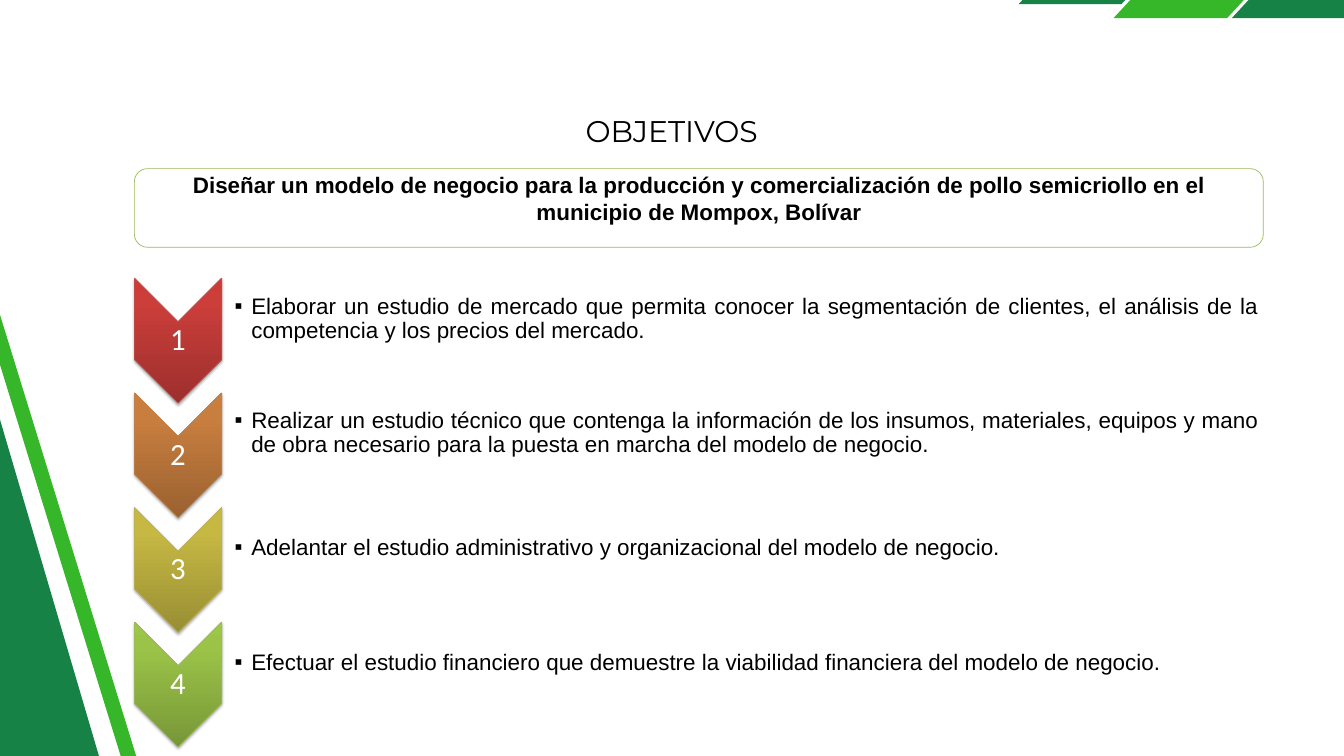
from pptx import Presentation
from pptx import util as u
from pptx.dml.color import RGBColor
from pptx.enum import shapes, text
from pptx.oxml import parse_xml
from pptx.oxml.ns import nsdecls

HUES = {"dark": "168246", "green": "35B729", "white": "FFFFFF",
        "black": "000000", "edge": "98B955"}

# Gradient stops (0, 80, 100 %), outline and text of each goal
GOALS = [
    (("9C2F2D", "CB3E3A", "CE3B37"), "C0504D",
     "Elaborar un estudio de mercado que permita conocer la segmentación de "
     "clientes, el análisis de la competencia y los precios del mercado."),
    (("9A6130", "C87E3F", "CC7E3C"), "BE8351",
     "Realizar un estudio técnico que contenga la información de los insumos, "
     "materiales, equipos y mano de obra necesario para la puesta en marcha "
     "del modelo de negocio."),
    (("988E34", "C6B843", "C9BB41"), "BDB255",
     "Adelantar el estudio administrativo y organizacional del modelo de negocio."),
    (("779737", "9BC348", "9DC746"), "9BBB59",
     "Efectuar el estudio financiero que demuestre la viabilidad financiera "
     "del modelo de negocio."),
]
STEP = 1.706


def color(name):
    return RGBColor.from_string(HUES.get(name, name))


def write(frame, words, size=24, font="Arial", hue="black", bold=False,
          align=text.PP_ALIGN.CENTER, anchor=text.MSO_ANCHOR.MIDDLE,
          pad=(0.02, 0.02, 0.02, 0.02), space=None, bullet=None):
    """Fill a text frame with one formatted paragraph."""
    frame.word_wrap = True
    frame.vertical_anchor = anchor
    (frame.margin_left, frame.margin_top,
     frame.margin_right, frame.margin_bottom) = map(u.Inches, pad)
    para = frame.paragraphs[0]
    para.alignment = align
    if space:
        para.line_spacing = space
    if bullet:
        para.level = 1
        props = para._p.get_or_add_pPr()
        props.set("marL", str(u.Inches(0.25)))
        props.set("indent", str(u.Inches(-0.25)))
        props.append(parse_xml(f'<a:buFont {nsdecls("a")} typeface="Arial"/>'))
        props.append(parse_xml(f'<a:buChar {nsdecls("a")} char="{bullet}"/>'))
    run = para.add_run()
    run.text = words
    run.font.size = u.Pt(size)
    run.font.name = font
    run.font.bold = bold
    run.font.color.rgb = color(hue)


class Deck:
    def __init__(self, wide, high):
        self.prs = Presentation()
        self.prs.slide_width = u.Inches(wide)
        self.prs.slide_height = u.Inches(high)
        self.slide = self.prs.slides.add_slide(self.prs.slide_layouts[6])

    def label(self, box, words, **style):
        item = self.slide.shapes.add_textbox(*map(u.Inches, box))
        write(item.text_frame, words, **style)

    def shape(self, kind, box, edge):
        item = self.slide.shapes.add_shape(kind, *map(u.Inches, box))
        item.shadow.inherit = False
        item.line.color.rgb = color(edge)
        item.line.width = u.Pt(0.75)
        return item

    def band(self, points, hue):
        spots = [(u.Inches(x), u.Inches(y)) for x, y in points]
        path = self.slide.shapes.build_freeform(*spots[0])
        path.add_line_segments(spots[1:], close=True)
        item = path.convert_to_shape()
        item.shadow.inherit = False
        item.fill.solid()
        item.fill.fore_color.rgb = color(hue)
        item.line.fill.background()

    def panel(self, box, words, **style):
        item = self.shape(shapes.MSO_SHAPE.ROUNDED_RECTANGLE, box, HUES["edge"])
        item.fill.background()
        write(item.text_frame, words, **style)

    def chevron(self, box, stops, edge):
        item = self.shape(shapes.MSO_SHAPE.CHEVRON, box, edge)
        item.rotation = 90
        props = item._element.spPr
        # Upward gradient that does not turn with the shape
        marks = "".join(f'<a:gs pos="{at}"><a:srgbClr val="{hue}"/></a:gs>'
                        for at, hue in zip((0, 80000, 100000), stops))
        props.insert_element_before(parse_xml(
            f'<a:gradFill {nsdecls("a")} rotWithShape="0"><a:gsLst>{marks}</a:gsLst>'
            '<a:lin ang="16200000" scaled="0"/></a:gradFill>'), "a:ln")
        # Soft shadow below
        props.find("{*}effectLst").append(parse_xml(
            f'<a:outerShdw {nsdecls("a")} blurRad="{u.Pt(3.1)}" dist="{u.Pt(1.8)}" '
            'dir="5400000" rotWithShape="0"><a:srgbClr val="000000">'
            '<a:alpha val="35000"/></a:srgbClr></a:outerShdw>'))


def main():
    deck = Deck(20, 11.25)

    # Slanted bands at the top and the left
    deck.band([(16.01, -0.86), (17.53, -0.86), (16.69, 0.06), (15.16, 0.06)], "dark")
    for left, hue in ((16.57, "green"), (18.33, "dark")):
        deck.band([(left + 1.23, -1.06), (left + 2.92, -1.06),
                   (left + 1.69, 0.27), (left, 0.27)], hue)
    deck.band([(-1.97, 17.32), (-6.6, 1.57), (-1.79, 0.16), (2.84, 15.9)], "dark")
    deck.band([(3.44, 16.58), (-1.4, 0.89), (-1.19, 0.83), (3.65, 16.51)], "green")

    # Title
    deck.label((7.22, 1.68, 5.55, 0.54), "OBJETIVOS", size=32, font="Montserrat",
               anchor=text.MSO_ANCHOR.TOP, pad=(0, 0, 0, 0))

    # Numbered goals
    for row, (stops, edge, words) in enumerate(GOALS):
        top = 4.2 + row * STEP
        deck.chevron((1.72, top + 0.22, 1.86, 1.3), stops, edge)
        deck.label((2, top + 0.59, 1.3, 0.56), str(row + 1), size=33,
                   font="Calibri", hue="white", space=0.9)
        deck.label((3.3, top, 15.44, 1.09), words, align=text.PP_ALIGN.JUSTIFY,
                   pad=(0.19, 0.02, 0.02, 0.02), space=0.9, bullet="▪")

    # Main goal
    deck.panel((2, 2.51, 16.8, 1.17),
               "Diseñar un modelo de negocio para la producción y comercialización "
               "de pollo semicriollo en el municipio de Mompox, Bolívar",
               bold=True, pad=(0.1, 0.05, 0.1, 0.35))

    deck.prs.save("out.pptx")


if __name__ == "__main__":
    main()
